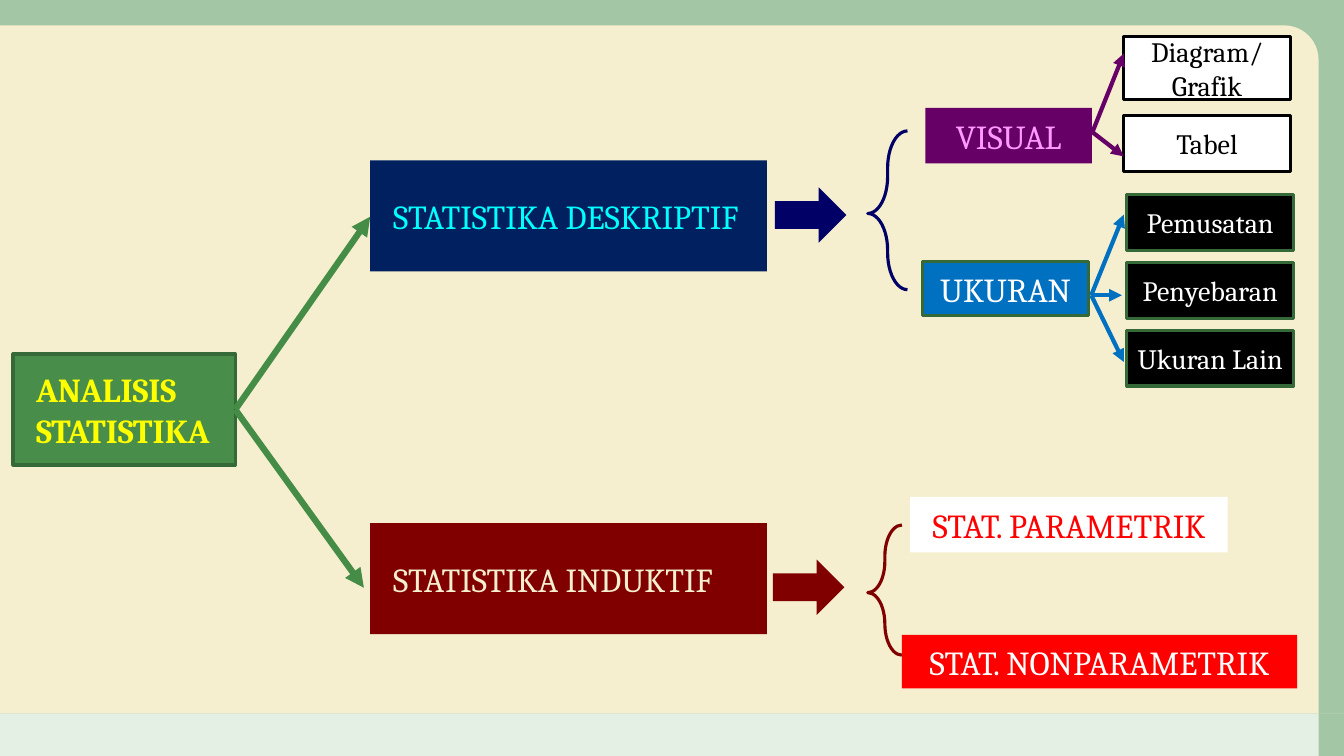
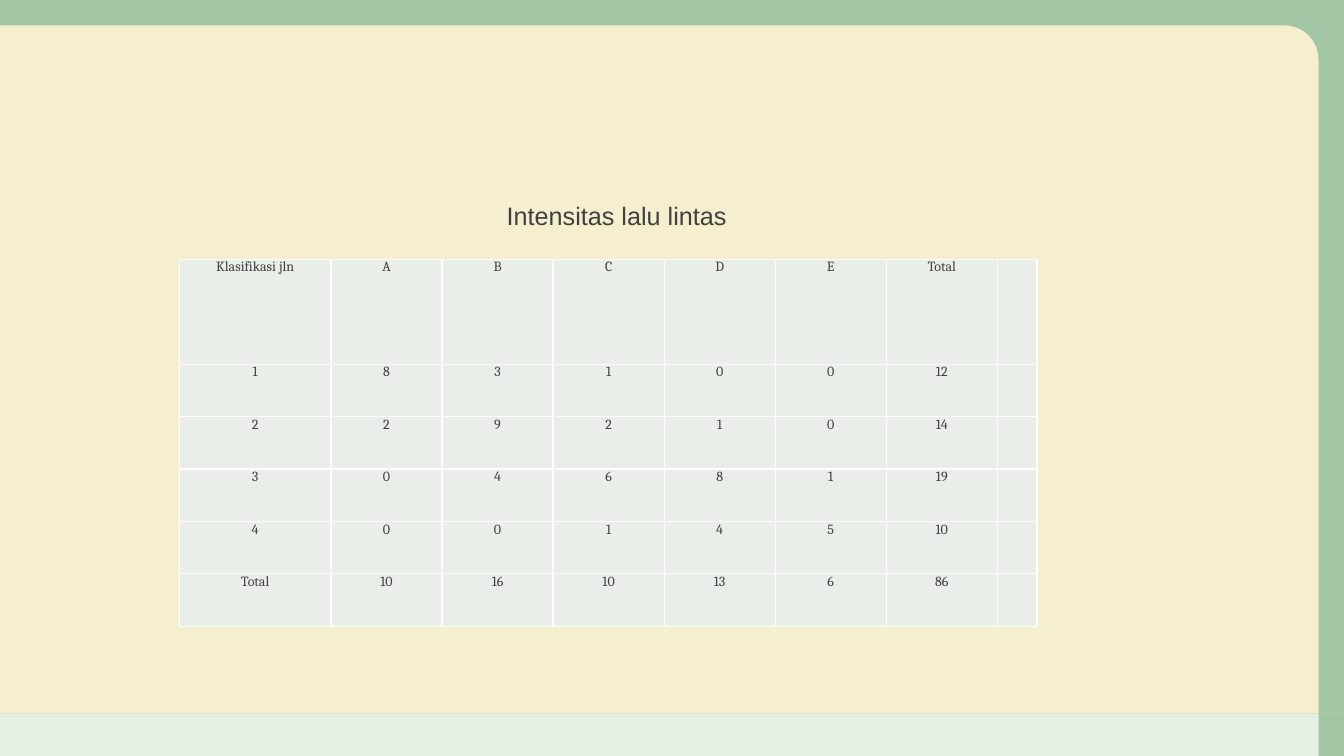
from dataclasses import dataclass

from lxml.etree import SubElement as Sub
from pptx import Presentation
from pptx.dml.color import RGBColor as RGB
from pptx.enum.shapes import MSO_CONNECTOR as Link, MSO_SHAPE as Form
from pptx.enum.text import MSO_ANCHOR as Anchor, PP_ALIGN as Align
from pptx.oxml.ns import qn
from pptx.util import Cm, Pt


@dataclass(frozen=True)
class Theme:
    # Colours
    green: str = "488E4A"
    edge: str = "356937"
    stem: str = "458D47"
    mint: str = "D8EBD8"
    cream: str = "F5EECF"
    navy: str = "002060"
    deep: str = "000066"
    cyan: str = "00FFFF"
    blue: str = "0070C0"
    plum: str = "660066"
    pink: str = "FF99FF"
    maroon: str = "800000"
    red: str = "FF0000"
    yellow: str = "FFFF00"
    white: str = "FFFFFF"
    black: str = "000000"
    gray: str = "404040"
    pale: str = "E9EEE9"
    # Type
    serif: str = "Cambria"
    sans: str = "Arial"
    big: int = 24
    mid: int = 20
    head: int = 18
    small: int = 10
    # Lines
    rim: float = 2.25
    thin: float = 3
    thick: float = 4.5


T = Theme()
WIDE, HIGH = 33.87, 19.05


class Deck:
    """Holds the style and the current slide."""

    def __init__(self):
        self.prs = Presentation()
        self.prs.slide_width, self.prs.slide_height = Cm(WIDE), Cm(HIGH)
        self.slide = None

    def page(self):
        """Start a slide with the shared green frame."""
        self.slide = self.prs.slides.add_slide(self.prs.slide_layouts[6])
        side, foot = 0.64, 1.07
        right, base = WIDE - side, HIGH - foot
        self.shape((0, base, right, foot), T.mint, alpha=70)
        self.shape((right, base, side, foot), T.green, alpha=50)
        self.shape((0, 0, WIDE, base), T.green, alpha=50)
        self.shape((0, side, right, base - side), T.cream,
                   form=Form.ROUND_1_RECTANGLE, bends=[0.05])

    def shape(self, box, fill=None, rim=None, form=Form.RECTANGLE,
              alpha=None, bends=()):
        item = self.slide.shapes.add_shape(form, *map(Cm, box))
        item.shadow.inherit = False
        for spot, bend in enumerate(bends):
            item.adjustments[spot] = bend
        if fill:
            item.fill.solid()
            item.fill.fore_color.rgb = RGB.from_string(fill)
        else:
            item.fill.background()
        if alpha:
            tint = item._element.spPr.find(".//" + qn("a:srgbClr"))
            Sub(tint, qn("a:alpha"), val=str(alpha * 1000))
        if rim:
            item.line.color.rgb = RGB.from_string(rim)
            item.line.width = Pt(T.rim)
        else:
            item.line.fill.background()
        return item

    def put(self, frame, text, size, ink, font=T.serif, bold=False,
            align=Align.CENTER):
        """Add each line of text as a paragraph with one run."""
        for spot, line in enumerate(text.split("\n")):
            para = frame.add_paragraph() if spot else frame.paragraphs[0]
            para.alignment = align
            run = para.add_run()
            run.text = line
            run.font.size, run.font.name, run.font.bold = Pt(size), font, bold
            run.font.color.rgb = RGB.from_string(ink)

    def label(self, text, box, fill, ink, rim=None, size=T.big, bold=False,
              align=Align.CENTER):
        frame = self.shape(box, fill, rim).text_frame
        frame.word_wrap = True
        frame.vertical_anchor = Anchor.MIDDLE
        frame.margin_left = Cm(0.1 if align == Align.CENTER else 0.58)
        frame.margin_right = Cm(0.1)
        self.put(frame, text, size, ink, bold=bold, align=align)

    def arrow(self, start, end, ink, width=T.thin):
        item = self.slide.shapes.add_connector(
            Link.STRAIGHT, *map(Cm, (*start, *end)))
        item.line.color.rgb = RGB.from_string(ink)
        item.line.width = Pt(width)
        props = item._element.spPr
        Sub(props.find(qn("a:ln")), qn("a:tailEnd"), type="triangle")
        Sub(props, qn("a:effectLst"))

    def block(self, left, top, ink):
        self.shape((left, top, 1.8, 1.4), ink, form=Form.RIGHT_ARROW)

    def brace(self, box, ink):
        self.shape(box, rim=ink, form=Form.LEFT_BRACE, bends=[0.93, 0.52])

    def title(self, text, box):
        frame = self.slide.shapes.add_textbox(*map(Cm, box)).text_frame
        frame.word_wrap = True
        self.put(frame, text, T.head, T.gray, T.sans, align=Align.LEFT)

    def table(self, rows, left, top, wides, highs):
        grid = self.slide.shapes.add_table(
            len(rows), len(wides), Cm(left), Cm(top),
            Cm(sum(wides)), Cm(sum(highs))).table
        for col, wide in zip(grid.columns, wides):
            col.width = Cm(wide)
        for row, high, texts in zip(grid.rows, highs, rows):
            row.height = Cm(high)
            for cell, text in zip(row.cells, texts):
                self.cell(cell, text)

    def cell(self, cell, text):
        cell.margin_left = cell.margin_right = 0
        cell.margin_top = cell.margin_bottom = 0
        props = cell._tc.get_or_add_tcPr()
        for side in ("lnL", "lnR", "lnT", "lnB"):
            line = Sub(props, qn("a:" + side), w=str(Pt(1)))
            Sub(Sub(line, qn("a:solidFill")), qn("a:srgbClr"), val=T.white)
        cell.fill.solid()
        cell.fill.fore_color.rgb = RGB.from_string(T.pale)
        if text:
            self.put(cell.text_frame, text, T.small, T.gray)


def tree(deck):
    """Branches of statistical analysis."""
    deck.page()

    # Root and its two main branches
    deck.label("ANALISIS STATISTIKA", (0.33, 8.92, 5.6, 2.8), T.green,
               T.yellow, T.edge, bold=True, align=Align.LEFT)
    for text, top, fill, ink, tip in (
            ("STATISTIKA DESKRIPTIF", 4.04, T.navy, T.cyan, (9.33, 5.46)),
            ("STATISTIKA INDUKTIF", 13.18, T.maroon, T.cream, (9.17, 14.81))):
        deck.label(text, (9.33, top, 10, 2.8), fill, ink, align=Align.LEFT)
        deck.arrow((5.93, 10.32), tip, T.stem, T.thick)

    # Block arrows and braces
    deck.block(19.53, 4.72, T.deep)
    deck.brace((21.87, 3.3, 1, 4), T.deep)
    deck.block(19.48, 14.1, T.maroon)
    deck.brace((21.87, 13.23, 0.86, 3.28), T.maroon)

    # Second level
    deck.label("VISUAL", (23.32, 2.72, 4.2, 1.4), T.plum, T.pink)
    deck.label("UKURAN", (23.24, 6.6, 4.2, 1.35), T.blue, T.white, T.edge)
    deck.label("STAT. PARAMETRIK", (22.94, 12.52, 8, 1.4), T.white, T.red)
    deck.label("STAT. NONPARAMETRIK", (22.73, 16, 9.96, 1.35), T.red, T.white)

    # Leaves
    for text, top, high in (("Diagram/\nGrafik", 0.92, 1.6),
                            ("Tabel", 2.92, 1.4)):
        deck.label(text, (28.32, top, 4.2, high), T.white, T.black, T.black,
                   T.mid)
    for spot, text in enumerate(("Pemusatan", "Penyebaran", "Ukuran Lain")):
        deck.label(text, (28.4, 4.91 + 1.71 * spot, 4.2, 1.4), T.black,
                   T.white, T.edge, T.mid)

    # Thin arrows to the leaves
    for start, ink, tips in (
            ((27.53, 3.33), T.plum, ((28.32, 1.35), (28.32, 3.94))),
            ((27.5, 7.44), T.blue,
             ((28.32, 5.41), (28.27, 7.44), (28.32, 9.12)))):
        for tip in tips:
            deck.arrow(start, tip, ink)


def traffic(deck):
    """Traffic counts by road class."""
    deck.page()
    rows = (
        ("Klasifikasi jln", "A", "B", "C", "D", "E", "Total", ""),
        ("1", "8", "3", "1", "0", "0", "12", ""),
        ("2", "2", "9", "2", "1", "0", "14", ""),
        ("3", "0", "4", "6", "8", "1", "19", ""),
        ("4", "0", "0", "1", "4", "5", "10", ""),
        ("Total", "10", "16", "10", "13", "6", "86", ""),
    )
    deck.table(rows, 4.52, 6.53, [3.82] + [2.8] * 6 + [1],
               [2.65] + [1.32] * 5)
    deck.title("Intensitas lalu lintas", (12.52, 4.93, 8.2, 1.02))


def main():
    deck = Deck()
    tree(deck)
    traffic(deck)
    deck.prs.save("out.pptx")


if __name__ == "__main__":
    main()
